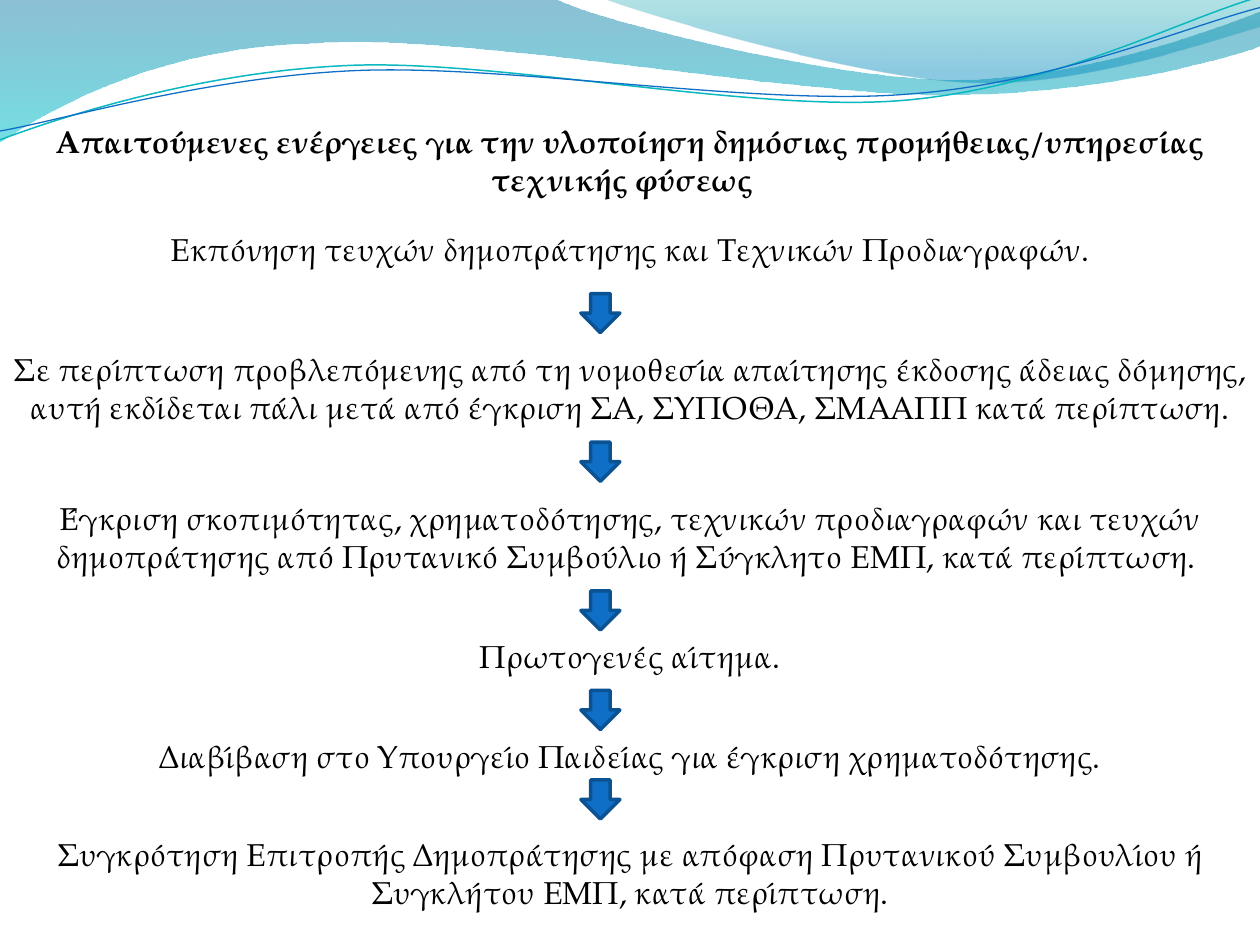
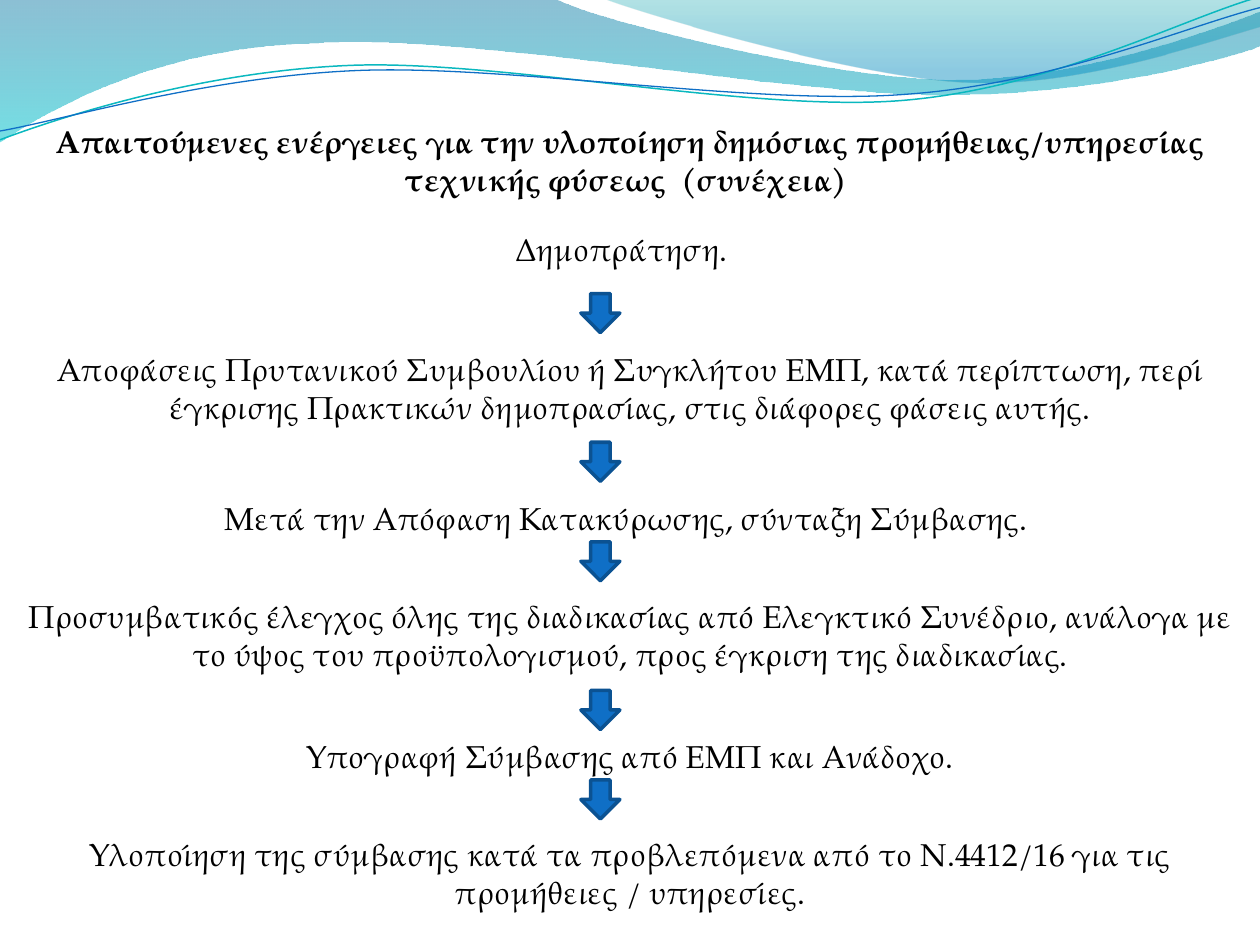
import math

from lxml import etree
from pptx import Presentation
from pptx.dml.color import RGBColor
from pptx.enum import shapes, text
from pptx.oxml import ns
from pptx.util import Inches, Pt

FONT = "TeX Gyre Pagella"
BLACK, BLUE, DARK_BLUE, TEAL = "000000", "0F6FC6", "0B5292", "0AB8BF"
BOX_HEIGHT = {1: 0.4, 2: 0.71}  # by number of text lines
ARROW_LEFT, ARROW_SIZE = 4.61, 0.31
LINE_ROTATION = 357.3

# A frame is left, top, width, height.
# A path is a start point, then lines (x, y) and cubic curves (x1, y1, x2, y2, x, y).
# A stop is (position, colour, opacity in percent).
WAVES = [
    ((-0.01, -0.01, 10.02, 1.14),
     [(0, 0), (4.4, -0.01), (4.76, 0.17, 6.64, 0.63, 7.58, 0.63),
      (8.53, 0.63, 9.58, 0.26, 10, 0.09), (10.01, 0.36),
      (9.83, 0.44, 8.7, 0.76, 7.46, 0.75), (6.22, 0.75, 3.82, 0.28, 2.57, 0.34),
      (1.29, 0.36, 0.46, 0.83, -0.01, 1.13), (0, 0)],
     [(0, "0074A1", 45), (1, "00C6CF", 55)]),
    ((4.79, -0.01, 5.21, 0.7),
     [(4.79, -0.01), (5.09, 0.11, 6.82, 0.62, 7.69, 0.65),
      (8.56, 0.69, 9.61, 0.32, 10, 0.21), (10, 0), (4.79, -0.01)],
     [(0, "00A1A9", 30), (0.8, "008BBF", 45)]),
]
WAVE_LINES = [
    ((-0.02, 0.22, 10.02, 0.71),
     [(0, 1.11), (0.48, 0.93, 1.58, 0.57, 2.77, 0.52),
      (3.95, 0.47, 5.93, 0.89, 7.13, 0.8), (8.33, 0.71, 9.38, 0.15, 9.98, -0.02)],
     TEAL, 0.85),
    ((-0.02, 0.3, 10.03, 0.58),
     [(0, 1.04), (0.47, 0.96, 1.64, 0.61, 2.83, 0.56),
      (4.03, 0.51, 5.97, 0.84, 7.17, 0.75), (8.36, 0.67, 9.41, 0.21, 10, 0.06)],
     BLUE, 0.75),
]

TITLE = "Απαιτούμενες ενέργειες για την υλοποίηση δημόσιας προμήθειας/υπηρεσίας τεχνικής φύσεως  "

# Each slide: title, arrow tops, steps as (top, number of lines, wording).
SLIDES = [
    (TITLE, [2.33, 3.51, 4.69, 5.48, 6.19], [
        (1.78, 1, "Εκπόνηση τευχών δημοπράτησης και Τεχνικών Προδιαγραφών."),
        (2.73, 2, "Σε περίπτωση προβλεπόμενης από τη νομοθεσία απαίτησης έκδοσης άδειας "
                  "δόμησης, αυτή εκδίδεται πάλι μετά από έγκριση ΣΑ, ΣΥΠΟΘΑ, ΣΜΑΑΠΠ κατά "
                  "περίπτωση."),
        (3.91, 2, "Έγκριση σκοπιμότητας, χρηματοδότησης, τεχνικών προδιαγραφών και τευχών "
                  "δημοπράτησης από Πρυτανικό Συμβούλιο ή Σύγκλητο ΕΜΠ, κατά περίπτωση. "),
        (5.01, 1, "Πρωτογενές αίτημα."),
        (5.8, 1, "Διαβίβαση στο Υπουργείο Παιδείας για έγκριση χρηματοδότησης."),
        (6.58, 2, "Συγκρότηση Επιτροπής Δημοπράτησης με απόφαση Πρυτανικού Συμβουλίου ή "
                  "Συγκλήτου ΕΜΠ, κατά περίπτωση."),
    ]),
    (TITLE + "(συνέχεια) ", [2.33, 3.51, 4.3, 5.48, 6.19], [
        (1.78, 1, "Δημοπράτηση.  "),
        (2.73, 2, "Αποφάσεις Πρυτανικού Συμβουλίου ή Συγκλήτου ΕΜΠ, κατά περίπτωση, περί "
                  "έγκρισης Πρακτικών δημοπρασίας, στις διάφορες φάσεις αυτής."),
        (3.91, 1, "Μετά την Απόφαση Κατακύρωσης, σύνταξη Σύμβασης. "),
        (4.69, 2, "Προσυμβατικός έλεγχος όλης της διαδικασίας από Ελεγκτικό Συνέδριο, "
                  "ανάλογα με το ύψος του προϋπολογισμού, προς έγκριση της διαδικασίας."),
        (5.8, 1, "Υπογραφή Σύμβασης από ΕΜΠ και Ανάδοχο."),
        (6.58, 2, "Υλοποίηση της σύμβασης κατά τα προβλεπόμενα από το Ν.4412/16 για τις "
                  "προμήθειες / υπηρεσίες."),
    ]),
]


def rgb(color):
    return RGBColor.from_string(color)


def add_child(parent, tag, **attributes):
    return etree.SubElement(parent, ns.qn(tag), {k: str(v) for k, v in attributes.items()})


def to_frame(x, y, frame, rotation):
    """Turn a slide point into EMU inside a frame that is rotated about its centre."""
    left, top, width, height = frame
    dx, dy = x - left - width / 2, y - top - height / 2
    angle = math.radians(-rotation)
    return (Inches(dx * math.cos(angle) - dy * math.sin(angle) + width / 2),
            Inches(dx * math.sin(angle) + dy * math.cos(angle) + height / 2))


def add_curve(s, frame, path, rotation=0):
    """Build a freeform through the path's nodes, then give its segments their curves."""
    nodes = [to_frame(*segment[-2:], frame, rotation) for segment in path]
    builder = s.shapes.build_freeform(*nodes[0])
    builder.add_line_segments(nodes[1:], close=False)
    sp = builder.convert_to_shape()
    sp.left, sp.top, sp.width, sp.height = map(Inches, frame)
    sp.rotation = rotation
    sp.shadow.inherit = False

    outline = sp._element.spPr.find(".//" + ns.qn("a:path"))
    outline.set("w", str(sp.width))
    outline.set("h", str(sp.height))
    for child in list(outline):
        outline.remove(child)
    tags = {2: "a:lnTo", 6: "a:cubicBezTo"}
    for i, segment in enumerate(path):
        command = add_child(outline, tags[len(segment)] if i else "a:moveTo")
        for px, py in zip(segment[::2], segment[1::2]):
            x, y = to_frame(px, py, frame, rotation)
            add_child(command, "a:pt", x=x, y=y)
    if path[0] == path[-1]:
        add_child(outline, "a:close")
    return sp


def add_wave(s, frame, path, stops):
    sp = add_curve(s, frame, path)
    sp.line.fill.background()
    sp.fill.gradient()
    sp.fill.gradient_angle = 270
    for stop, (position, color, _) in zip(sp.fill.gradient_stops, stops):
        stop.position = position
        stop.color.rgb = rgb(color)
    colors = sp._element.spPr.findall(".//" + ns.qn("a:srgbClr"))
    for element, (_, _, opacity) in zip(colors, stops):
        add_child(element, "a:alpha", val=opacity * 1000)


def add_wave_line(s, frame, path, color, width):
    sp = add_curve(s, frame, path, LINE_ROTATION)
    sp.fill.background()
    sp.line.color.rgb = rgb(color)
    sp.line.width = Pt(width)


def add_text(s, top, lines, wording, bold=False):
    """Add a centred text box as wide as the slide."""
    box = s.shapes.add_textbox(0, Inches(top), Inches(10), Inches(BOX_HEIGHT[lines]))
    tf = box.text_frame
    tf.word_wrap = True
    tf.auto_size = text.MSO_AUTO_SIZE.SHAPE_TO_FIT_TEXT
    p = tf.paragraphs[0]
    p.text = wording
    p.alignment = text.PP_ALIGN.CENTER
    font = p.runs[0].font
    font.name, font.size, font.bold = FONT, Pt(18), bold
    font.color.rgb = rgb(BLACK)


def add_down_arrow(s, top):
    size = Inches(ARROW_SIZE)
    sp = s.shapes.add_shape(shapes.MSO_SHAPE.DOWN_ARROW,
                            Inches(ARROW_LEFT), Inches(top), size, size)
    sp.shadow.inherit = False
    sp.fill.solid()
    sp.fill.fore_color.rgb = rgb(BLUE)
    sp.line.color.rgb = rgb(DARK_BLUE)
    sp.line.width = Pt(2)


def add_flow_slide(prs, title, arrow_tops, steps):
    s = prs.slides.add_slide(prs.slide_layouts[6])
    for wave in WAVES:
        add_wave(s, *wave)
    for wave_line in WAVE_LINES:
        add_wave_line(s, *wave_line)
    add_text(s, 0.92, 2, title, bold=True)
    for i, step in enumerate(steps):
        add_text(s, *step)
        if i < len(arrow_tops):
            add_down_arrow(s, arrow_tops[i])


def main():
    prs = Presentation()
    prs.slide_width, prs.slide_height = Inches(10), Inches(7.5)
    for content in SLIDES:
        add_flow_slide(prs, *content)
    prs.save("out.pptx")


if __name__ == "__main__":
    main()
